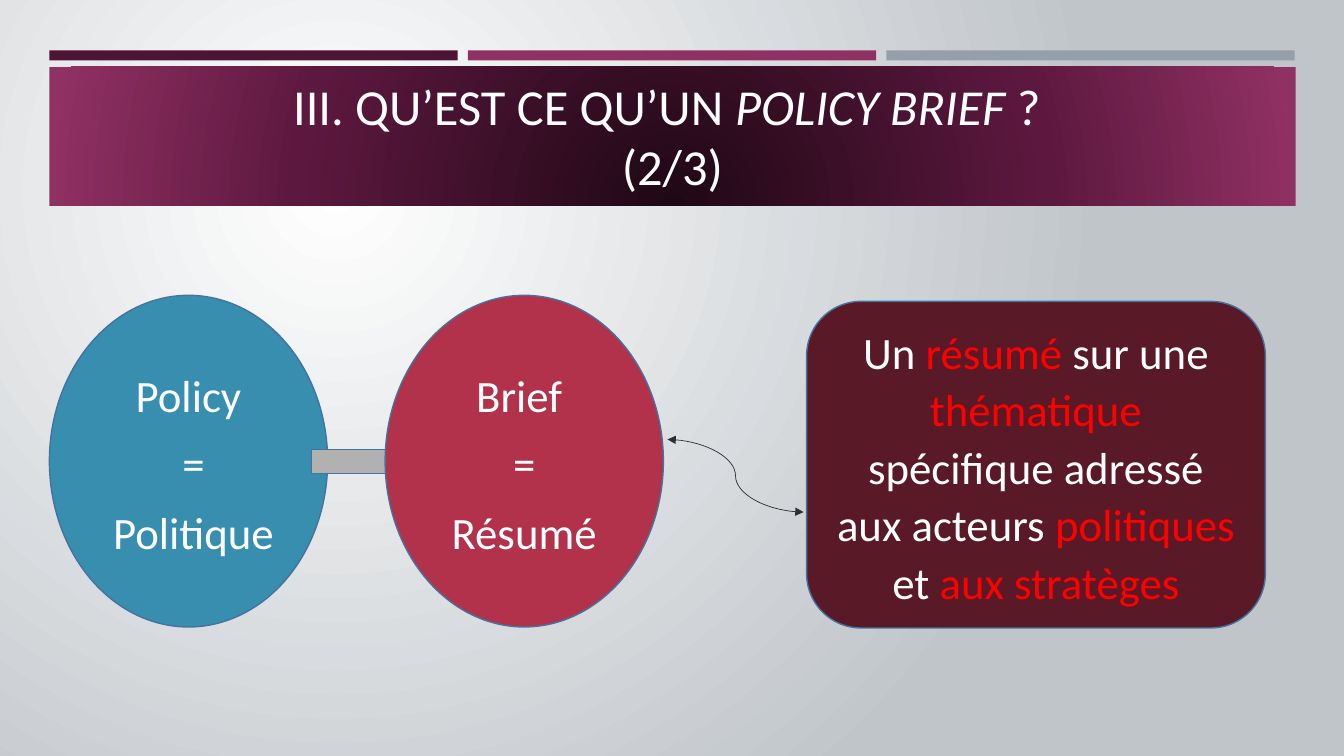
"""Build the slide that explains what a policy brief is."""
from lxml import etree
from pptx import Presentation
from pptx.dml.color import RGBColor
from pptx.enum.shapes import MSO_CONNECTOR, MSO_SHAPE
from pptx.enum.text import MSO_ANCHOR, PP_ALIGN
from pptx.oxml.ns import qn
from pptx.util import Inches, Pt

RECTANGLE, OVAL = MSO_SHAPE.RECTANGLE, MSO_SHAPE.OVAL
ROUNDED, MINUS = MSO_SHAPE.ROUNDED_RECTANGLE, MSO_SHAPE.MATH_MINUS
CURVE, CENTER, MIDDLE = MSO_CONNECTOR.CURVE, PP_ALIGN.CENTER, MSO_ANCHOR.MIDDLE

THEME = {
    "font": "Calibri", "title_size": 36, "body_size": 32,
    "white": "FFFFFF", "red": "FF0000", "outline": "43739E", "arrow": "2E2E2E",
    "plum": "4D1434", "magenta": "903163", "slate": "969FA7",
    "blue": "388EAF", "crimson": "B2324B", "grey": "B1B1B1", "maroon": "591926",
    "page": [(0, "FFFFFF"), (100, "C0C5CA")],
    "band": [(0, "1F0815"), (60, "5D183F"), (100, "903163")],
}
PAGE_FOCUS = {"l": 50, "t": 50, "r": 100, "b": 100}
BAND_FOCUS = {"l": 50, "t": 130, "r": 50, "b": -30}

TITLE = [[("III. QU’EST CE QU’UN ", "white", False), ("POLICY BRIEF", "white", True),
          (" ? \v(2/3)", "white", False)]]
TERMS = [("blue", ["Policy", " =", " Politique"]),
         ("crimson", ["Brief ", "=", "Résumé"])]
DEFINITION = [[
    ("Un ", "white", False), ("résumé ", "red", False), ("sur une ", "white", False),
    ("thématique", "red", False), (" spécifique adressé aux acteurs ", "white", False),
    ("politiques ", "red", False), ("et", "white", False), (" aux stratèges", "red", False),
]]
STRIPES = ["plum", "magenta", "slate"]
MARGIN, STRIPE_WIDTH, STRIPE_STEP = 0.49, 4.05, 4.15
OVAL_TOP, OVAL_WIDTH, OVAL_HEIGHT, OVAL_STEP = 2.93, 2.76, 3.29, 3.33
BODY_FORMAT = {"alignment": CENTER, "line_spacing": 1.07, "space_after": Pt(8)}
TITLE_FORMAT = {"alignment": CENTER}


def color(name):
    return RGBColor.from_string(THEME[name])


def radial_fill(fill, element, stops, focus):
    fill.gradient()
    gradient = next(element.iter(qn("a:gradFill")))
    for child in list(gradient):
        gradient.remove(child)
    stop_list = etree.SubElement(gradient, qn("a:gsLst"))
    for position, value in stops:
        stop = etree.SubElement(stop_list, qn("a:gs"), pos=str(position * 1000))
        etree.SubElement(stop, qn("a:srgbClr"), val=value)
    circle = etree.SubElement(gradient, qn("a:path"), {"path": "circle"})
    etree.SubElement(circle, qn("a:fillToRect"),
                     {side: str(share * 1000) for side, share in focus.items()})


def add_box(page, kind, place, fill=None, outline=None):
    box = page.shapes.add_shape(kind, *map(Inches, place))
    box.shadow.inherit = False
    if fill:
        box.fill.solid()
        box.fill.fore_color.rgb = color(fill)
    if outline:
        box.line.color.rgb = color(outline)
        box.line.width = Pt(1)
    else:
        box.line.fill.background()
    return box


def write(box, paragraphs, size, para_format):
    frame = box.text_frame
    frame.word_wrap = True
    frame.vertical_anchor = MIDDLE
    for index, spans in enumerate(paragraphs):
        para = frame.paragraphs[0] if index == 0 else frame.add_paragraph()
        for name, value in para_format.items():
            setattr(para, name, value)
        for text, ink, italic in spans:
            for part_index, part in enumerate(text.split("\v")):
                if part_index:
                    para.add_line_break()
                span = para.add_run()
                span.text = part
                font_format = {"name": THEME["font"], "size": Pt(THEME[size]), "italic": italic}
                for name, value in font_format.items():
                    setattr(span.font, name, value)
                span.font.color.rgb = color(ink)


def add_double_arrow(page, start, end):
    arrow = page.shapes.add_connector(CURVE, *map(Inches, start + end))
    arrow.line.color.rgb = color("arrow")
    arrow.line.width = Pt(0.5)
    properties = arrow.element.spPr
    for tag in ("a:headEnd", "a:tailEnd"):
        etree.SubElement(properties.find(qn("a:ln")), qn(tag), type="triangle")
    etree.SubElement(properties, qn("a:effectLst"))


def main():
    deck = Presentation()
    deck.slide_width, deck.slide_height = Inches(13.33), Inches(7.5)
    page = deck.slides.add_slide(deck.slide_layouts[6])
    radial_fill(page.background.fill, page.element, THEME["page"], PAGE_FOCUS)

    for index, fill in enumerate(STRIPES):
        add_box(page, RECTANGLE, (MARGIN + index * STRIPE_STEP, 0.5, STRIPE_WIDTH, 0.1), fill)
    band = add_box(page, RECTANGLE, (MARGIN, 0.66, 12.36, 1.38))
    radial_fill(band.fill, band.element, THEME["band"], BAND_FOCUS)
    title = page.shapes.add_textbox(*map(Inches, (0.64, 0.8, 12.06, 1.08)))
    write(title, TITLE, "title_size", TITLE_FORMAT)

    for index, (fill, lines) in enumerate(TERMS):
        if index:
            add_box(page, MINUS, (2.96, 4.08, 1, 1), "grey", "outline")
        place = (MARGIN + index * OVAL_STEP, OVAL_TOP, OVAL_WIDTH, OVAL_HEIGHT)
        term = add_box(page, OVAL, place, fill, "outline")
        write(term, [[(line, "white", False)] for line in lines], "body_size", BODY_FORMAT)

    add_double_arrow(page, (6.62, 4.36), (7.97, 5.08))
    definition = add_box(page, ROUNDED, (8, 2.99, 4.55, 3.24), "maroon", "outline")
    write(definition, DEFINITION, "body_size", BODY_FORMAT)
    deck.save("out.pptx")


if __name__ == "__main__":
    main()
